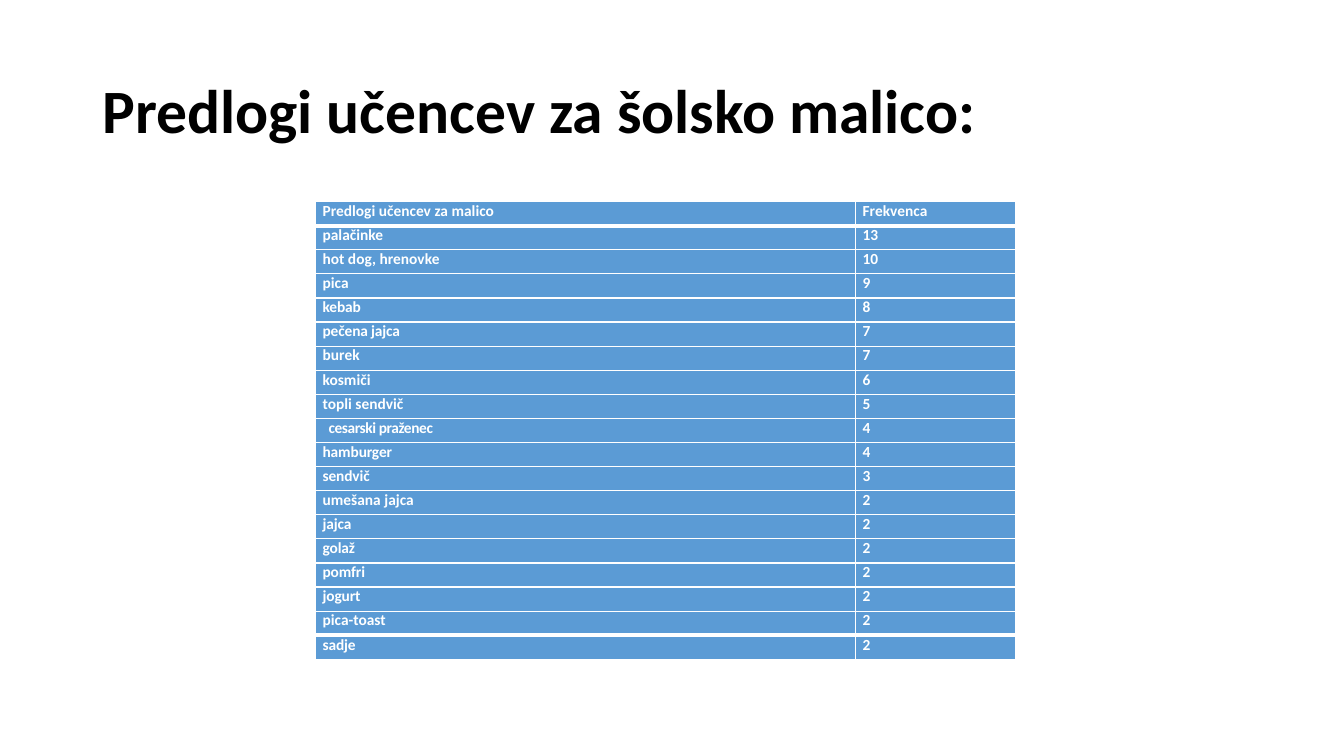
"""Build a slide with a frequency table of pupils' school snack suggestions."""
from typing import NamedTuple

from lxml import etree
from pptx import Presentation, util as u
from pptx.dml.color import RGBColor
from pptx.enum import text
from pptx.oxml.ns import qn

BLACK = RGBColor(0x00, 0x00, 0x00)
WHITE = RGBColor(0xFF, 0xFF, 0xFF)
BLUE = RGBColor(0x5B, 0x9B, 0xD5)
FONT = "Calibri"
THIN, THICK = 1, 3
WIDTHS = (13.61, 4.04)
HEIGHT = 11.55


class Snack(NamedTuple):
    name: str
    count: str
    indent: float = 0.18
    spacing: int = -10


SNACKS = [
    Snack("Predlogi učencev za malico", "Frekvenca", spacing=0),
    Snack("palačinke", "13", spacing=0),
    Snack("hot dog, hrenovke", "10", spacing=0),
    Snack("pica", "9", spacing=0),
    Snack("kebab", "8"),
    Snack("pečena jajca", "7"),
    Snack("burek", "7", spacing=0),
    Snack("kosmiči", "6", spacing=0),
    Snack("topli sendvič", "5", spacing=0),
    Snack("cesarski praženec", "4", indent=0.33, spacing=-30),
    Snack("hamburger", "4"),
    Snack("sendvič", "3"),
    Snack("umešana jajca", "2", spacing=0),
    Snack("jajca", "2"),
    Snack("golaž", "2"),
    Snack("pomfri", "2"),
    Snack("jogurt", "2"),
    Snack("pica-toast", "2", spacing=0),
    Snack("sadje", "2"),
]


def style(font, size: float, color: RGBColor) -> None:
    """Apply the bold slide font."""
    font.name, font.size, font.bold = FONT, u.Pt(size), True
    font.color.rgb = color


def border(cell, side: str, width: float) -> None:
    """Draw a white line on one side of a cell."""
    line = etree.SubElement(cell._tc.get_or_add_tcPr(), qn(f"a:ln{side}"), w=str(u.Pt(width)))
    fill = etree.SubElement(line, qn("a:solidFill"))
    etree.SubElement(fill, qn("a:srgbClr"), val=str(WHITE))


def fill_cell(cell, label: str, indent: float, spacing: int, top: float, bottom: float) -> None:
    """Write and format one table cell."""
    for side, width in zip("LRTB", (THIN, THIN, top, bottom)):
        border(cell, side, width)
    cell.fill.solid()
    cell.fill.fore_color.rgb = BLUE
    cell.margin_left = u.Cm(indent)
    cell.margin_right = cell.margin_top = cell.margin_bottom = 0
    cell.text_frame.text = label
    par = cell.text_frame.paragraphs[0]
    par.space_before = u.Pt(0.1)
    run = par.runs[0]
    style(run.font, 11, WHITE)
    run._r.get_or_add_rPr().set("spc", str(spacing))


def add_title(slide, label: str) -> None:
    """Place and format the slide title."""
    title = slide.shapes.title
    title.left, title.top, title.width, title.height = map(u.Cm, (2.33, 1.01, 29.21, 3.68))
    frame = title.text_frame
    frame.text = label
    frame.vertical_anchor = text.MSO_ANCHOR.MIDDLE
    par = frame.paragraphs[0]
    par.alignment = text.PP_ALIGN.LEFT
    par.line_spacing = 0.9
    style(par.runs[0].font, 44, BLACK)


def add_snacks(slide, snacks: list[Snack]) -> None:
    """Add the table of snacks and their counts."""
    table = slide.shapes.add_table(
        len(snacks), len(WIDTHS), u.Cm(7.95), u.Cm(5.08), u.Cm(sum(WIDTHS)), u.Cm(HEIGHT)
    ).table
    table.horz_banding = False
    for col, width in zip(table.columns, WIDTHS):
        col.width = u.Cm(width)
    last = len(snacks) - 1
    for row, snack in enumerate(snacks):
        top = THICK if row in (1, last) else THIN
        bottom = THICK if row in (0, last - 1) else THIN
        fill_cell(table.cell(row, 0), snack.name, snack.indent, snack.spacing, top, bottom)
        fill_cell(table.cell(row, 1), snack.count, 0.18, 0, top, bottom)


def main() -> None:
    """Build and save the presentation."""
    deck = Presentation()
    deck.slide_width, deck.slide_height = u.Cm(33.87), u.Cm(19.05)
    slide = deck.slides.add_slide(deck.slide_layouts[5])
    add_title(slide, "Predlogi učencev za šolsko malico:")
    add_snacks(slide, SNACKS)
    deck.save("out.pptx")


if __name__ == "__main__":
    main()
